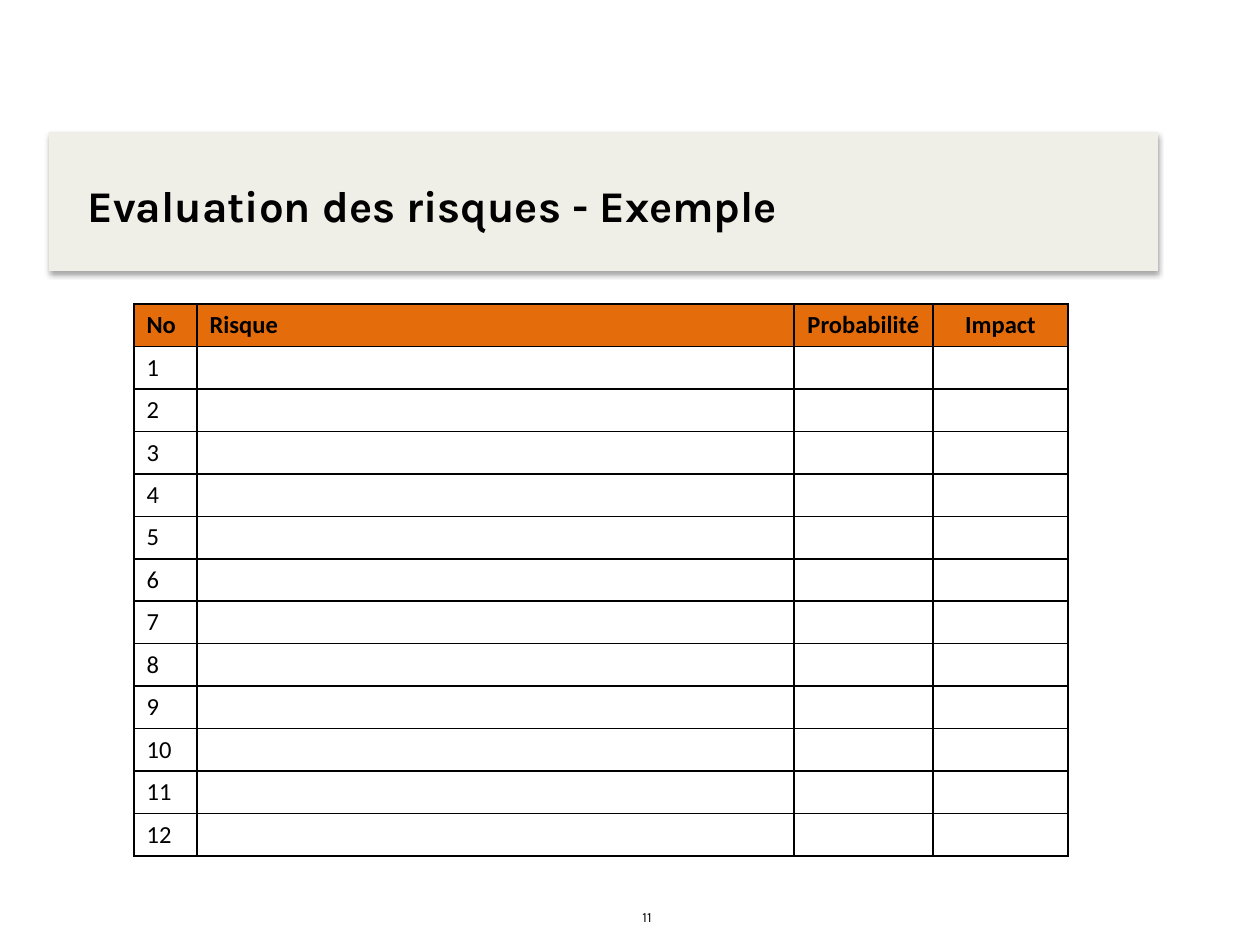
from dataclasses import dataclass

from lxml.etree import SubElement
from pptx import Presentation
from pptx.dml.color import RGBColor
from pptx.enum.shapes import MSO_SHAPE
from pptx.enum.text import MSO_ANCHOR, PP_ALIGN
from pptx.oxml import parse_xml
from pptx.oxml.ns import nsdecls, qn
from pptx.util import Emu, Pt

PX_PER_INCH = 126
COLORS = {
    "black": "000000",
    "white": "FFFFFF",
    "banner": "EFEEE7",
    "header": "E46C0A",
}
RISK_COUNT = 12
ROW_HEIGHT = 42


@dataclass(frozen=True)
class Column:
    label: str
    width: int
    align: PP_ALIGN = PP_ALIGN.LEFT


COLUMNS = [
    Column("No", 63),
    Column("Risque", 597),
    Column("Probabilité", 139, PP_ALIGN.CENTER),
    Column("Impact", 135, PP_ALIGN.CENTER),
]


def px(n: int) -> Emu:
    return Emu(round(n * 914400 / PX_PER_INCH))


def rgb(name: str) -> RGBColor:
    return RGBColor.from_string(COLORS[name])


def style_text(p, font: str, size: int, bold: bool = False) -> None:
    for r in p.runs:
        r.font.name = font
        r.font.size = Pt(size)
        r.font.bold = bold
        r.font.color.rgb = rgb("black")


def add_banner(s) -> None:
    sp = s.shapes.add_shape(MSO_SHAPE.RECTANGLE, px(49), px(132), px(1109), px(139))
    sp.fill.solid()
    sp.fill.fore_color.rgb = rgb("banner")
    sp.line.fill.background()
    sp.shadow.inherit = False
    effects = sp._element.spPr.find(qn("a:effectLst"))
    effects.append(parse_xml(
        f'<a:outerShdw {nsdecls("a")} blurRad="{Pt(3.1)}" dist="{Pt(1.8)}" '
        f'dir="5400000" rotWithShape="0"><a:srgbClr val="{COLORS["black"]}">'
        '<a:alpha val="35000"/></a:srgbClr></a:outerShdw>'
    ))
    s.shapes._spTree.insert(2, sp._element)


def add_title(s, text: str) -> None:
    sp = s.shapes.title
    sp.left, sp.top, sp.width, sp.height = px(75), px(155), px(1062), px(100)
    tf = sp.text_frame
    tf.text = text
    tf.vertical_anchor = MSO_ANCHOR.MIDDLE
    p = tf.paragraphs[0]
    p.alignment = PP_ALIGN.LEFT
    style_text(p, "Karla", 25, True)


def add_borders(cell) -> None:
    tcPr = cell._tc.get_or_add_tcPr()
    for i, side in enumerate(("lnL", "lnR", "lnT", "lnB")):
        tcPr.insert(i, parse_xml(
            f'<a:{side} {nsdecls("a")} w="{Pt(1)}"><a:solidFill>'
            f'<a:srgbClr val="{COLORS["black"]}"/></a:solidFill></a:{side}>'
        ))


def fill_cell(cell, text: str, fill: str, align: PP_ALIGN, bold: bool) -> None:
    cell.fill.solid()
    cell.fill.fore_color.rgb = rgb(fill)
    cell.vertical_anchor = MSO_ANCHOR.BOTTOM
    add_borders(cell)
    p = cell.text_frame.paragraphs[0]
    p.alignment = align
    if text:
        p.text = text
        style_text(p, "Calibri", 14, bold)
    else:
        SubElement(p._p, qn("a:endParaRPr"), sz="1400")


def add_risk_table(s) -> None:
    rows = RISK_COUNT + 1
    width = sum(col.width for col in COLUMNS)
    table = s.shapes.add_table(
        rows, len(COLUMNS), px(134), px(304), px(width), px(rows * ROW_HEIGHT)
    ).table
    table.horz_banding = False
    for row in table.rows:
        row.height = px(ROW_HEIGHT)
    for c, col in enumerate(COLUMNS):
        table.columns[c].width = px(col.width)
        fill_cell(table.cell(0, c), col.label, "header", col.align, True)
        for n in range(1, rows):
            text = str(n) if c == 0 else ""
            fill_cell(table.cell(n, c), text, "white", col.align, False)


def add_page_number(s, number: int) -> None:
    tf = s.shapes.add_textbox(px(630), px(902), px(412), px(30)).text_frame
    tf.word_wrap = True
    tf.text = str(number)
    style_text(tf.paragraphs[0], "Karla", 8)


def main() -> None:
    prs = Presentation()
    prs.slide_width, prs.slide_height = px(1260), px(945)
    s = prs.slides.add_slide(prs.slide_layouts[5])
    add_banner(s)
    add_title(s, "Evaluation des risques - Exemple")
    add_risk_table(s)
    add_page_number(s, 11)
    prs.save("out.pptx")


if __name__ == "__main__":
    main()
